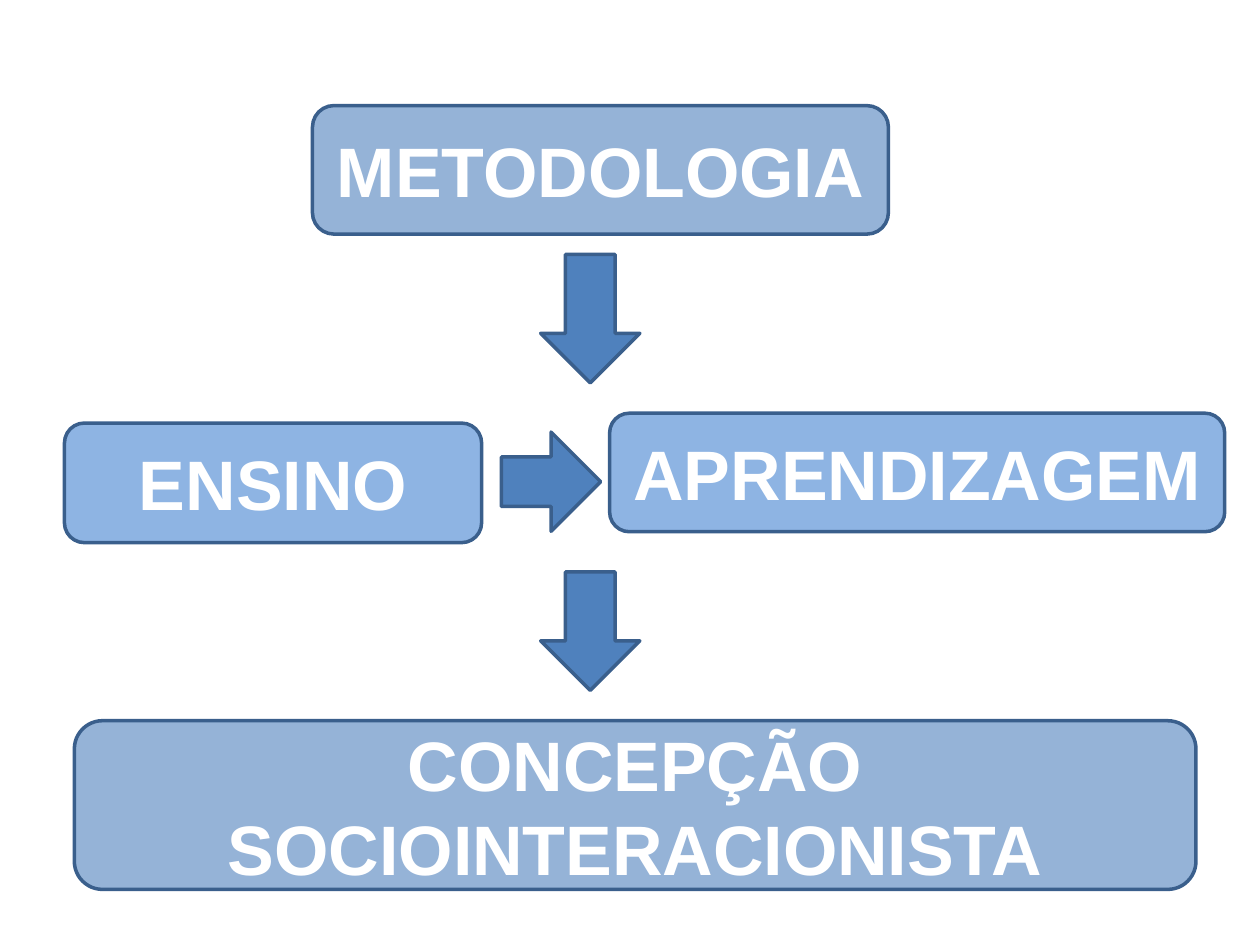
from pptx import Presentation
from pptx.dml.color import RGBColor
from pptx.enum import shapes, text
from pptx.util import Cm, Pt

STEEL = RGBColor(0x95, 0xB3, 0xD7)
SKY = RGBColor(0x8E, 0xB4, 0xE3)
BLUE = RGBColor(0x4F, 0x81, 0xBD)
EDGE = RGBColor(0x3A, 0x5F, 0x8C)
WHITE = RGBColor(0xFF, 0xFF, 0xFF)
KIND = shapes.MSO_SHAPE


def draw(slide, kind, box, fill):
    """Add a flat outlined shape; box is left, top, width, height in cm."""
    shape = slide.shapes.add_shape(kind, *map(Cm, box))
    shape.shadow.inherit = False
    shape.fill.solid()
    shape.fill.fore_color.rgb = fill
    shape.line.color.rgb = EDGE
    shape.line.width = Pt(2)
    return shape


def add_step(slide, box, label, fill):
    frame = draw(slide, KIND.ROUNDED_RECTANGLE, box, fill).text_frame
    frame.word_wrap = True
    frame.vertical_anchor = text.MSO_ANCHOR.MIDDLE
    frame.text = label
    para = frame.paragraphs[0]
    para.alignment = text.PP_ALIGN.CENTER
    font = para.runs[0].font
    font.name = "Arial"
    font.size = Pt(40)
    font.bold = True
    font.color.rgb = WHITE


def add_arrow(slide, box, turn=0):
    draw(slide, KIND.DOWN_ARROW, box, BLUE).rotation = turn


def add_pair(slide, box):
    """Place teaching and learning side by side, with an arrow between."""
    left, top, width, height = box
    add_step(slide, (left, top + 0.2, 8.41, height - 0.2), "ENSINO", SKY)
    add_step(slide, (left + width - 12.4, top, 12.4, height - 0.22),
             "APRENDIZAGEM", SKY)
    add_arrow(slide, (left + 8.81, top + 0.38, 2, 2), 270)


def add_flow(slide, box):
    """Stack the three levels of the diagram, joined by down arrows."""
    left, top, width, height = box
    add_step(slide, (left + 5, top, 11.61, 2.59), "METODOLOGIA", STEEL)
    add_pair(slide, (left, top + 6.2, width, 2.61))
    for drop, size in ((3, 2.59), (9.4, 2.39)):
        add_arrow(slide, (left + 9.6, top + drop, 2, size))
    add_step(slide, (left + 0.2, top + height - 3.4, 22.61, 3.4),
             "CONCEPÇÃO SOCIOINTERACIONISTA", STEEL)


def main():
    deck = Presentation()
    deck.slide_width, deck.slide_height = Cm(25.4), Cm(19.05)
    slide = deck.slides.add_slide(deck.slide_layouts[6])
    add_flow(slide, (1.3, 2.13, 23.39, 15.8))
    deck.save("out.pptx")


if __name__ == "__main__":
    main()
